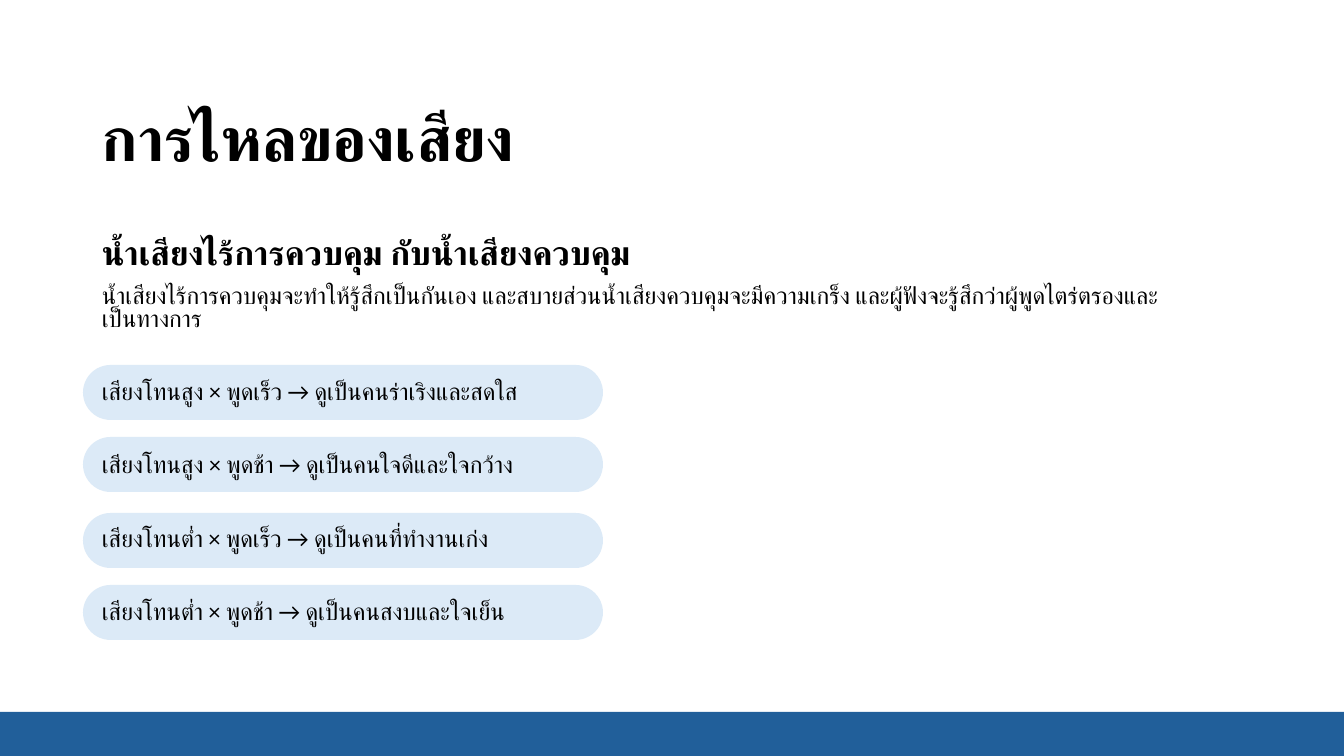
"""Build a slide on how tone and pace of voice shape an impression."""
import pptx
import pptx.dml.color
import pptx.enum.shapes
import pptx.enum.text
import pptx.oxml
import pptx.oxml.ns
import pptx.util

SLIDE_WIDTH, SLIDE_HEIGHT = 1344, 756
EMU_PER_PX = 12192000 / SLIDE_WIDTH
FONT = "Calibri"
COLORS = {"text": "000000", "pill": "DCEAF7", "footer": "215F9A"}
TITLE = {"size": 44, "bold": True, "line_spacing": 0.9, "space_before": 0}
HEADING = {"size": 24, "bold": True, "line_spacing": 0.8, "space_before": 10}
BODY = {"size": 17, "bold": False, "line_spacing": 0.8, "space_before": 10}
PILL_LABEL = {**BODY, "space_before": 36}
PILL_TOPS = (365, 437, 513, 585)
TONES = (
    "เสียงโทนสูง × พูดเร็ว → ดูเป็นคนร่าเริงและสดใส",
    "เสียงโทนสูง × พูดช้า → ดูเป็นคนใจดีและใจกว้าง",
    "เสียงโทนต่ำ × พูดเร็ว → ดูเป็นคนที่ทำงานเก่ง",
    "เสียงโทนต่ำ × พูดช้า → ดูเป็นคนสงบและใจเย็น",
)


def px(*lengths):
    """Turn pixel lengths into EMU."""
    return [pptx.util.Emu(round(length * EMU_PER_PX)) for length in lengths]


def rgb(name):
    """Look up a named colour."""
    return pptx.dml.color.RGBColor.from_string(COLORS[name])


def add_block(slide, kind, box, color):
    """Add a plain filled shape without line or shadow."""
    shape = slide.shapes.add_shape(kind, *px(*box))
    shape.shadow.inherit = False
    shape.fill.solid()
    shape.fill.fore_color.rgb = rgb(color)
    shape.line.fill.background()
    return shape


def add_pill(slide, top):
    """Add a fully rounded bar behind one tone."""
    kind = pptx.enum.shapes.MSO_SHAPE.ROUNDED_RECTANGLE
    pill = add_block(slide, kind, (83, top, 520, 55), "pill")
    pill.adjustments[0] = 0.5


def format_paragraph(paragraph, text, style):
    """Write one run of text and apply its style."""
    run = paragraph.add_run()
    run.text = text
    run.font.color.rgb = rgb("text")
    font_values = {
        "name": FONT,
        "size": pptx.util.Pt(style["size"]),
        "bold": style["bold"],
    }
    paragraph_values = {
        "line_spacing": style["line_spacing"],
        "space_before": pptx.util.Pt(style["space_before"]),
    }
    for target, values in ((run.font, font_values), (paragraph, paragraph_values)):
        for name, value in values.items():
            setattr(target, name, value)
    complex_font = pptx.oxml.parse_xml(
        f'<a:cs {pptx.oxml.ns.nsdecls("a")} typeface="{FONT}"/>'
    )
    run.font._element.append(complex_font)


def add_text(slide, box, anchor, entries):
    """Add a wrapping text box with one paragraph per entry."""
    frame = slide.shapes.add_textbox(*px(*box)).text_frame
    frame.word_wrap = True
    frame.vertical_anchor = anchor
    for index, (text, style) in enumerate(entries):
        paragraph = frame.add_paragraph() if index else frame.paragraphs[0]
        format_paragraph(paragraph, text, style)


def main():
    """Compose and save the slide."""
    presentation = pptx.Presentation()
    presentation.slide_width, presentation.slide_height = px(SLIDE_WIDTH, SLIDE_HEIGHT)
    slide = presentation.slides.add_slide(presentation.slide_layouts[6])
    anchors = pptx.enum.text.MSO_ANCHOR

    for top in PILL_TOPS:
        add_pill(slide, top)
    body = [
        ("น้ำเสียงไร้การควบคุม กับน้ำเสียงควบคุม", HEADING),
        (
            "น้ำเสียงไร้การควบคุมจะทำให้รู้สึกเป็นกันเอง "
            "และสบายส่วนน้ำเสียงควบคุมจะมีความเกร็ง "
            "และผู้ฟังจะรู้สึกว่าผู้พูดไตร่ตรองและเป็นทางการ",
            BODY,
        ),
    ]
    body += [(tone, PILL_LABEL) for tone in TONES]
    add_text(slide, (92, 235, 1110, 404), anchors.TOP, body)
    add_text(slide, (92, 62, 742, 160), anchors.MIDDLE, [("การไหลของเสียง", TITLE)])
    footer = (0, 712, SLIDE_WIDTH, 44)
    add_block(slide, pptx.enum.shapes.MSO_SHAPE.RECTANGLE, footer, "footer")
    presentation.save("out.pptx")


if __name__ == "__main__":
    main()
